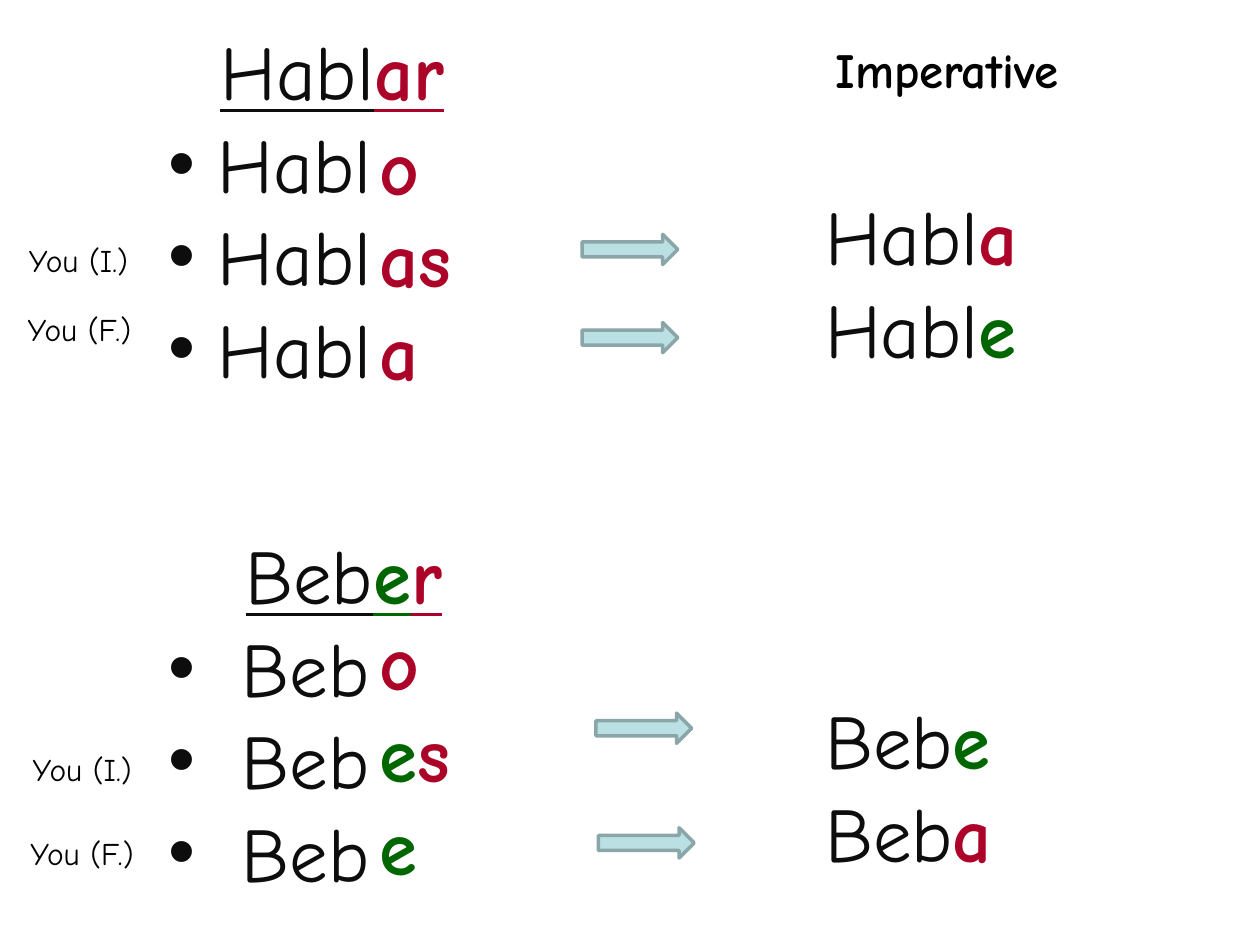
from dataclasses import dataclass

from lxml.etree import SubElement as Sub
from pptx import Presentation as Deck
from pptx.dml.color import RGBColor as Rgb
from pptx.enum.shapes import MSO_SHAPE as Form
from pptx.oxml.ns import qn
from pptx.util import Inches, Pt


@dataclass(frozen=True)
class Theme:
    font: str = "Comic Neue"
    ink: str = "0D0D0D"
    black: str = "000000"
    red: str = "AC0428"
    green: str = "006600"
    fill: str = "BBE0E3"
    edge: str = "8AA6A8"
    verb: int = 44
    head: int = 28
    note: int = 18


class Page:
    def __init__(self, slide, theme):
        self.slide, self.theme = slide, theme

    def text(self, x, y, wide, size, lines):
        """Each line is a list of (words, colour, bold, underline) runs."""
        high = 1.2 * size / 72 * len(lines)
        box = self.slide.shapes.add_textbox(
            Inches(x), Inches(y), Inches(wide), Inches(high))
        frame = box.text_frame
        frame.word_wrap = True
        frame.margin_left = frame.margin_right = 0
        frame.margin_top = frame.margin_bottom = 0
        for i, runs in enumerate(lines):
            para = frame.add_paragraph() if i else frame.paragraphs[0]
            for words, tint, bold, under in runs:
                run = para.add_run()
                run.text = words
                font = run.font
                font.name, font.size = self.theme.font, Pt(size)
                font.bold, font.underline = bold, under
                font.color.rgb = Rgb.from_string(tint)
        return frame.paragraphs

    def indent(self, para, left, bullet=False):
        props = para._p.get_or_add_pPr()
        props.set("marL", str(Inches(left)))
        if bullet:
            props.set("indent", str(-Inches(left)))
            Sub(props, qn("a:buFont"), typeface="Arial")
            Sub(props, qn("a:buChar"), char="•")

    def arrow(self, x, y):
        shape = self.slide.shapes.add_shape(
            Form.RIGHT_ARROW, Inches(x), Inches(y), Inches(0.76), Inches(0.24))
        shape.shadow.inherit = False
        shape.fill.solid()
        shape.fill.fore_color.rgb = Rgb.from_string(self.theme.fill)
        shape.line.color.rgb = Rgb.from_string(self.theme.edge)
        shape.line.width = Pt(2)

    def ending(self, letters, under=False):
        """Mark each letter: e in green, all others in red."""
        look = self.theme
        return [(c, look.green if c == "e" else look.red, True, under)
                for c in letters]

    def verb(self, stem, last, ends, orders, tops, lefts):
        look = self.theme
        plain = (stem, look.ink, False, False)
        title = [(stem, look.ink, False, True)] + self.ending(last, True)
        # Infinitive and bulleted stems
        paras = self.text(1.34, tops[0], 3.9, look.verb,
                          [title] + [[plain] for _ in ends])
        self.indent(paras[0], lefts[0])
        for para in paras[1:]:
            self.indent(para, lefts[1], bullet=True)
        # Present endings
        self.text(3.01, tops[1], 1.4, look.verb,
                  [self.ending(end) for end in ends])
        # Imperative forms
        self.text(6.55, tops[2], 2.45, look.verb,
                  [[plain] + self.ending(end) for end in orders])


def main():
    deck = Deck()
    deck.slide_width, deck.slide_height = Inches(10), Inches(7.5)
    look = Theme()
    page = Page(deck.slides.add_slide(deck.slide_layouts[6]), look)

    # Verb tables
    page.verb("Habl", "ar", ["o", "as", "a"], ["a", "e"],
              (0.19, 0.94, 1.5), (0.41, 0.39))
    page.verb("Beb", "er", ["o", "es", "e"], ["e", "a"],
              (4.19, 4.87, 5.5), (0.61, 0.58))

    # Column heading
    page.text(6.63, 0.31, 2.71, look.head,
              [[("Imperative", look.black, True, False)]])

    # Arrows from present to imperative
    for x, y in [(4.62, 1.86), (4.62, 2.56), (4.73, 5.66), (4.75, 6.57)]:
        page.arrow(x, y)

    # Informal and formal labels
    for kind, x, y in [("I", 0.23, 1.91), ("F", 0.22, 2.46),
                       ("I", 0.26, 5.95), ("F", 0.24, 6.62)]:
        page.text(x, y, 0.92, look.note,
                  [[(f"You ({kind}.)", look.black, False, False)]])

    deck.save("out.pptx")


if __name__ == "__main__":
    main()
